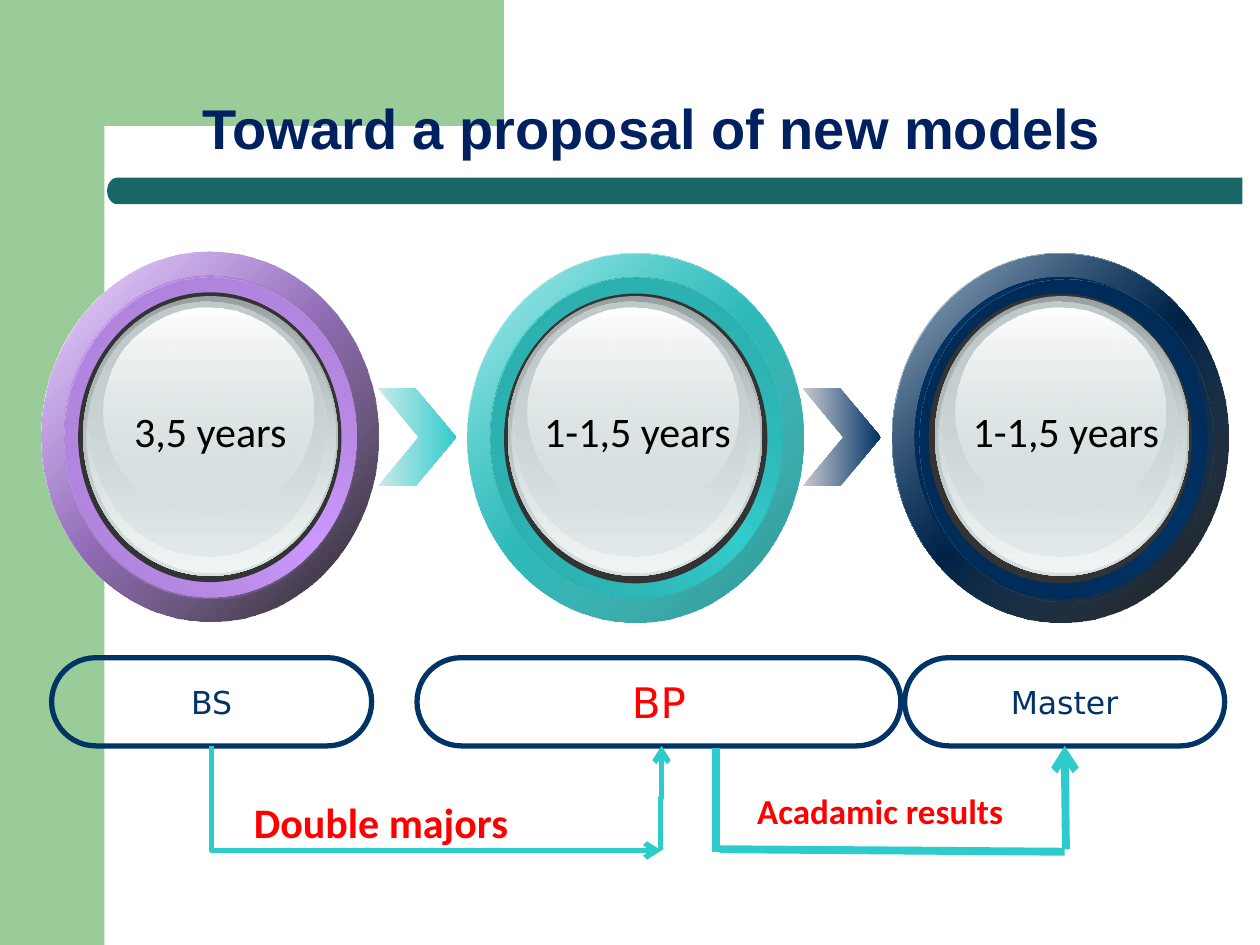
import math

from lxml import etree
from pptx import Presentation
from pptx import util as u
from pptx.dml.color import RGBColor
from pptx.enum import shapes, text
from pptx.oxml import ns

Inches = u.Inches
KIND = shapes.MSO_SHAPE
COLORS = {
    "green": "99CC99", "teal": "196666", "title": "002060", "navy": "003366",
    "red": "FF0000", "black": "000000", "arrow": "2ECBCB", "groove": "333333",
    "white": "FFFFFF", "glass": "D6E1E2", "glass_shade": "99A1A2",
    "glass_glow": "F2F5F5", "glass_mid": "C1CBCC",
    "purple": "CC99FF", "purple_rim": "9C75C3", "purple_shade": "A77ED1",
    "aqua": "33CCCC", "aqua_rim": "279C9C", "aqua_shade": "2AA7A7",
    "aqua_dark": "249292", "aqua_pale": "CAEBEB",
    "navy_rim": "00274E", "navy_shade": "002A54", "navy_pale": "C9CAD0",
}

prs = Presentation()
prs.slide_width, prs.slide_height = Inches(10), Inches(7.5)
slide = prs.slides.add_slide(prs.slide_layouts[6])


def add_part(kind, box, fill=None, angle=0, adj=None):
    """Add a shape without outline; fill is a colour name or a list of
    (position, colour name, opacity) gradient stops, angle runs clockwise."""
    part = slide.shapes.add_shape(kind, *map(Inches, box))
    part.shadow.inherit = False
    part.line.fill.background()
    part.fill.background()
    if adj is not None:
        part.adjustments[0] = adj
    if isinstance(fill, str):
        part.fill.solid()
        part.fill.fore_color.rgb = RGBColor.from_string(COLORS[fill])
    elif fill:
        grad = etree.Element(ns.qn("a:gradFill"), rotWithShape="1")
        stops = etree.SubElement(grad, ns.qn("a:gsLst"))
        for position, color, opacity in fill:
            stop = etree.SubElement(stops, ns.qn("a:gs"), pos=str(position * 1000))
            rgb = etree.SubElement(stop, ns.qn("a:srgbClr"), val=COLORS[color])
            if opacity < 100:
                etree.SubElement(rgb, ns.qn("a:alpha"), val=str(opacity * 1000))
        etree.SubElement(grad, ns.qn("a:lin"), ang=str(angle * 60000), scaled="0")
        no_fill = part._element.spPr.find(ns.qn("a:noFill"))
        no_fill.getparent().replace(no_fill, grad)
    return part


def write(part, wording, size, font, color, bold=False, align="CENTER",
          anchor="MIDDLE", wrap=False):
    frame = part.text_frame
    frame.word_wrap = wrap
    frame.vertical_anchor = text.MSO_ANCHOR[anchor]
    paragraph = frame.paragraphs[0]
    paragraph.alignment = text.PP_ALIGN[align]
    run = paragraph.add_run()
    run.text = wording
    for name, value in {"size": u.Pt(size), "name": font, "bold": bold}.items():
        setattr(run.font, name, value)
    run.font.color.rgb = RGBColor.from_string(COLORS[color])
    return frame


# Green frame with a rounded inner corner, and the rule under the title
add_part(KIND.RECTANGLE, (0, 0, 0.83, 7.5), "green")
corner = [(1.16 - 0.33 * math.sin(a), 0.98 - 0.34 * math.cos(a))
          for a in (math.radians(step * 7.5) for step in range(13))]
builder = slide.shapes.build_freeform(3.5, 0, scale=Inches(1))
builder.add_line_segments([(3.5, 0.64), *corner, (0.5, 0.98), (0.5, 0)])
band = builder.convert_to_shape()
band.shadow.inherit = False
band.line.fill.background()
band.fill.solid()
band.fill.fore_color.rgb = RGBColor.from_string(COLORS["green"])
add_part(KIND.ROUNDED_RECTANGLE, (1.01, 1.41, 8.85, 0.21), "teal", adj=0)
add_part(KIND.FLOWCHART_DELAY, (0.85, 1.41, 0.16, 0.21), "teal").rotation = 180

heading = add_part(KIND.ROUNDED_RECTANGLE, (1.09, 0.75, 8.17, 0.62), adj=0.217)
title_frame = write(heading, "Toward a proposal of new models", 32, "Arial",
                    "title", bold=True, anchor="BOTTOM", wrap=True)
title_frame.paragraphs[0].line_spacing = 0.9

# Chevrons between the stages
for left, pale, color in ((3, "aqua_pale", "aqua"), (6.37, "navy_pale", "navy")):
    add_part(KIND.CHEVRON, (left, 3.08, 0.62, 0.78),
             [(0, pale, 100), (100, color, 100)], adj=0.525)

# Stage medallions: ring left and top, glass left, overlay offset, colour, dark end
stages = [
    (0.33, 2, 0.66, (0.18, 0.2), "purple", ("black", 90)),
    (3.71, 2.01, 4.03, (0.18, 0.19), "aqua", ("aqua_dark", 100)),
    (7.08, 2.01, 7.42, (0.22, 0.21), "navy", ("black", 90)),
]
glass_layers = [
    (0, 2.35, 2.02, 2.22, ("glass_shade", 100), ("glass", 100)),
    (0.03, 2.37, 1.97, 2.17, ("glass", 0), ("glass_glow", 100)),
    (0.05, 2.39, 1.87, 2.03, ("glass_mid", 100), ("glass", 48)),
    (0.16, 2.44, 1.67, 1.64, ("white", 100), ("glass", 38)),
]
for left, top, glass_left, (dx, dy), color, dark in stages:
    ring = (left, top, 2.67, 2.93)
    rim = color + "_rim"
    add_part(KIND.OVAL, ring,
             [(0, "white", 100), (50, color, 100), (100, "white", 100)], 45)
    add_part(KIND.OVAL, ring, [(0, color, 32), (100, *dark)], 45)
    add_part(KIND.OVAL, (left + 0.18, top + 0.19, 2.32, 2.55),
             [(0, rim, 100), (50, color, 100), (100, rim, 100)], 315)
    add_part(KIND.OVAL, (left + dx, top + dy, 2.32, 2.55),
             [(0, color + "_shade", 100), (100, color, 0)], 45)
    add_part(KIND.OVAL, (left + 0.29, top + 0.32, 2.09, 2.3), "groove")
    for inset, layer_top, width, height, start, end in glass_layers:
        add_part(KIND.OVAL, (glass_left + inset, layer_top, width, height),
                 [(0, *start), (100, *end)], 90)

# Degree pills
pills = {}
for degree, left, width, size, color in (
        ("BS", 0.41, 2.54, 18, "navy"),
        ("BP", 3.31, 3.84, 24, "red"),
        ("Master", 7.18, 2.54, 18, "navy")):
    pill = add_part(KIND.ROUNDED_RECTANGLE, (left, 5.22, width, 0.7), adj=0.5)
    pill.line.color.rgb = RGBColor.from_string(COLORS["navy"])
    pill.line.width = u.Pt(3)
    write(pill, degree, size, "DejaVu Sans", color)
    pills[degree] = pill

# Durations and arrow captions
for wording, box, size, style in (
        ("3,5 years", (0.96, 3.17, 1.42, 0.5), 24, {"color": "black"}),
        ("1-1,5 years", (4.21, 3.17, 1.7, 0.5), 24, {"color": "black"}),
        ("1-1,5 years", (7.61, 3.17, 1.7, 0.5), 24, {"color": "black"}),
        ("Double majors", (1.01, 6.27, 4.03, 0.5), 24,
         {"color": "red", "bold": True, "wrap": True}),
        ("Acadamic results", (5.91, 6.22, 2.88, 0.44), 20,
         {"color": "red", "bold": True, "wrap": True, "align": "LEFT"})):
    caption = slide.shapes.add_textbox(*map(Inches, box))
    frame = write(caption, wording, size, "Calibri", anchor="TOP", **style)
    frame.auto_size = text.MSO_AUTO_SIZE.SHAPE_TO_FIT_TEXT

# Paths between degrees: ends, width, arrowhead, and turn of the bent ones
paths = [
    ((3.05, 4.55, 3.88, 8.12), 3, True,
     ("bentConnector2", {"rot": "16200000", "flipH": "1"})),
    ((4.83, 6.33, 5.66, 6.34), 3, True,
     ("bentConnector3", {"rot": "5400000", "flipH": "1", "flipV": "1"})),
    ((5.68, 5.94, 5.68, 6.76), 4.5, False, None),
    ((5.71, 6.74, 8.45, 6.76), 4.5, False, None),
    ((8.46, 6.74, 8.45, 5.92), 4.5, True, None),
]
for ends, width, has_head, bend in paths:
    kind = shapes.MSO_CONNECTOR.ELBOW if bend else shapes.MSO_CONNECTOR.STRAIGHT
    link = slide.shapes.add_connector(kind, *map(Inches, ends))
    link.line.color.rgb = RGBColor.from_string(COLORS["arrow"])
    link.line.width = u.Pt(width)
    properties = link._element.spPr
    if has_head:
        etree.SubElement(properties.find(ns.qn("a:ln")), ns.qn("a:tailEnd"), type="arrow")
    etree.SubElement(properties, ns.qn("a:effectLst"))
    if bend:
        preset, turn = bend
        properties.find(ns.qn("a:prstGeom")).set("prst", preset)
        for name, value in turn.items():
            properties.find(ns.qn("a:xfrm")).set(name, value)
link.end_connect(pills["Master"], 2)

prs.save("out.pptx")
